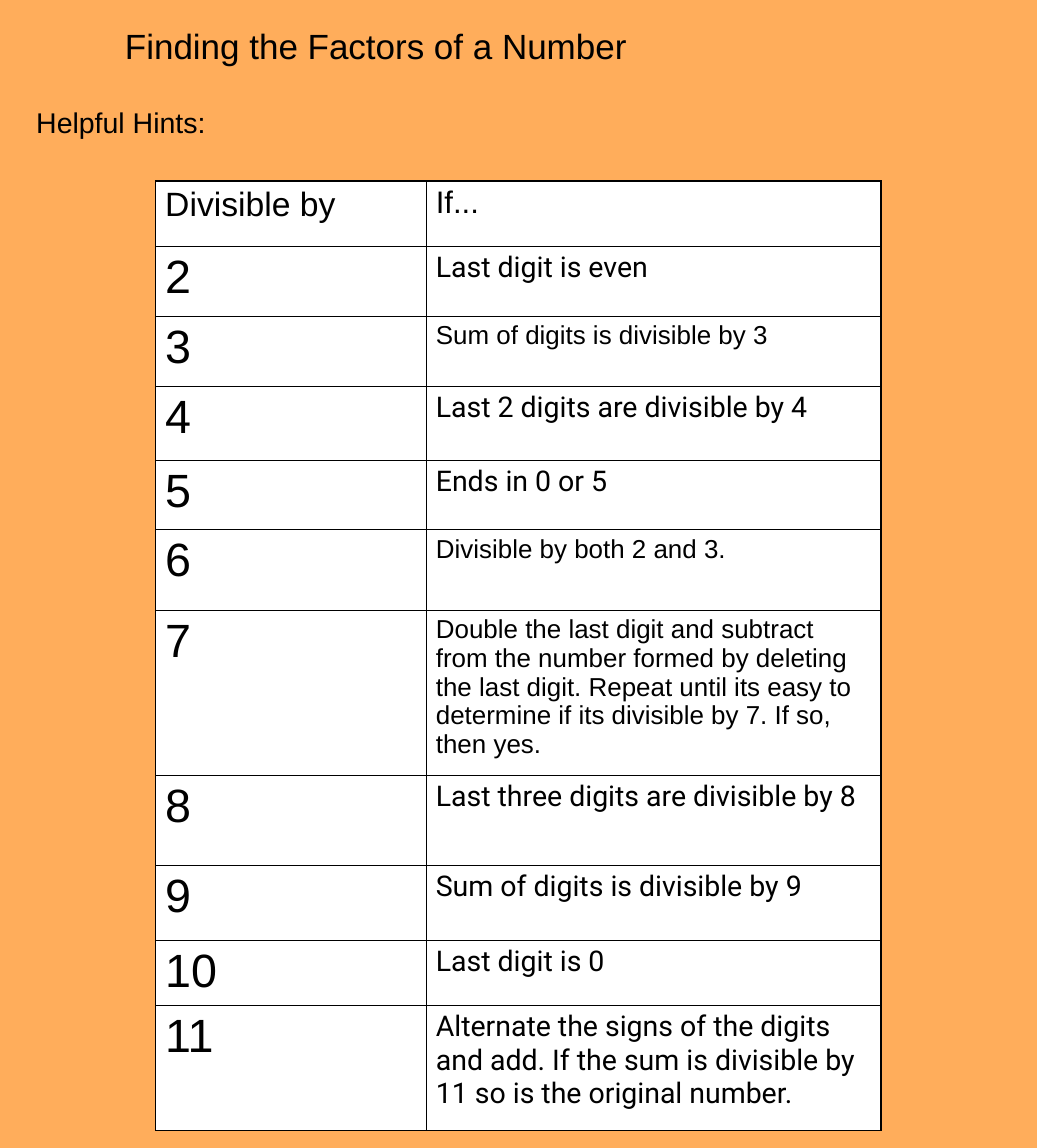
from pptx import Presentation
from pptx.dml.color import RGBColor
from pptx.enum.text import MSO_AUTO_SIZE
from pptx.oxml import parse_xml
from pptx.oxml.ns import nsdecls
from pptx.util import Inches, Pt


def color(value):
    return RGBColor.from_string(value)


def style(tf, size, font):
    f = tf.paragraphs[0].runs[0].font
    f.size, f.name = Pt(size), font
    f.color.rgb = color("000000")


# Slide and background
prs = Presentation()
prs.slide_width, prs.slide_height = Pt(800), Pt(886)
s = prs.slides.add_slide(prs.slide_layouts[6])
s.background.fill.solid()
s.background.fill.fore_color.rgb = color("FFAD5B")

# Headings
headings = [
    ("Finding the Factors of a Number", 27, (1.24, 0.21, 7.31, 0.56)),
    ("Helpful Hints:", 22, (0.29, 1.08, 2.66, 0.47)),
]
for text, size, box in headings:
    tf = s.shapes.add_textbox(*map(Inches, box)).text_frame
    tf.word_wrap = True
    tf.auto_size = MSO_AUTO_SIZE.SHAPE_TO_FIT_TEXT
    tf.text = text
    style(tf, size, "Arial")

# Divisibility rules: row height, divisor, rule, rule size, rule font
rules = [
    (0.7, "Divisible by", "If...", 24, "Arial"),
    (0.75, "2", "Last digit is even", 22, "Roboto"),
    (0.75, "3", "Sum of digits is divisible by 3", 20, "Arial"),
    (0.8, "4", "Last 2 digits are divisible by 4", 22, "Roboto"),
    (0.74, "5", "Ends in 0 or 5", 22, "Roboto"),
    (0.86, "6", "Divisible by both 2 and 3.", 20, "Arial"),
    (1.77, "7", "Double the last digit and subtract from the number formed by "
     "deleting the last digit. Repeat until its easy to determine if its "
     "divisible by 7. If so, then yes.", 20, "Arial"),
    (0.97, "8", "Last three digits are divisible by 8", 22, "Roboto"),
    (0.8, "9", "Sum of digits is divisible by 9", 22, "Roboto"),
    (0.7, "10", "Last digit is 0", 22, "Roboto"),
    (1.34, "11", "Alternate the signs of the digits and add. If the sum is "
     "divisible by 11 so is the original number.", 22, "Roboto"),
]
widths = (2.9, 4.87)
height = sum(rule[0] for rule in rules)
table = s.shapes.add_table(len(rules), len(widths), Inches(1.67), Inches(1.94),
                           Inches(sum(widths)), Inches(height)).table
table.first_row = table.horz_banding = False
for column, width in zip(table.columns, widths):
    column.width = Inches(width)

# Cells with white fill and thin black borders
for i, (row_height, divisor, rule, size, font) in enumerate(rules):
    table.rows[i].height = Inches(row_height)
    entries = [(divisor, 36 if i else 26, "Arial"), (rule, size, font)]
    for j, (text, text_size, text_font) in enumerate(entries):
        cell = table.cell(i, j)
        cell.text_frame.text = text
        style(cell.text_frame, text_size, text_font)
        tcPr = cell._tc.get_or_add_tcPr()
        for side in ("lnL", "lnR", "lnT", "lnB"):
            tcPr.append(parse_xml(
                f'<a:{side} {nsdecls("a")} w="{Pt(1)}"><a:solidFill>'
                f'<a:srgbClr val="000000"/></a:solidFill></a:{side}>'))
        cell.fill.solid()
        cell.fill.fore_color.rgb = color("FFFFFF")

prs.save("out.pptx")
